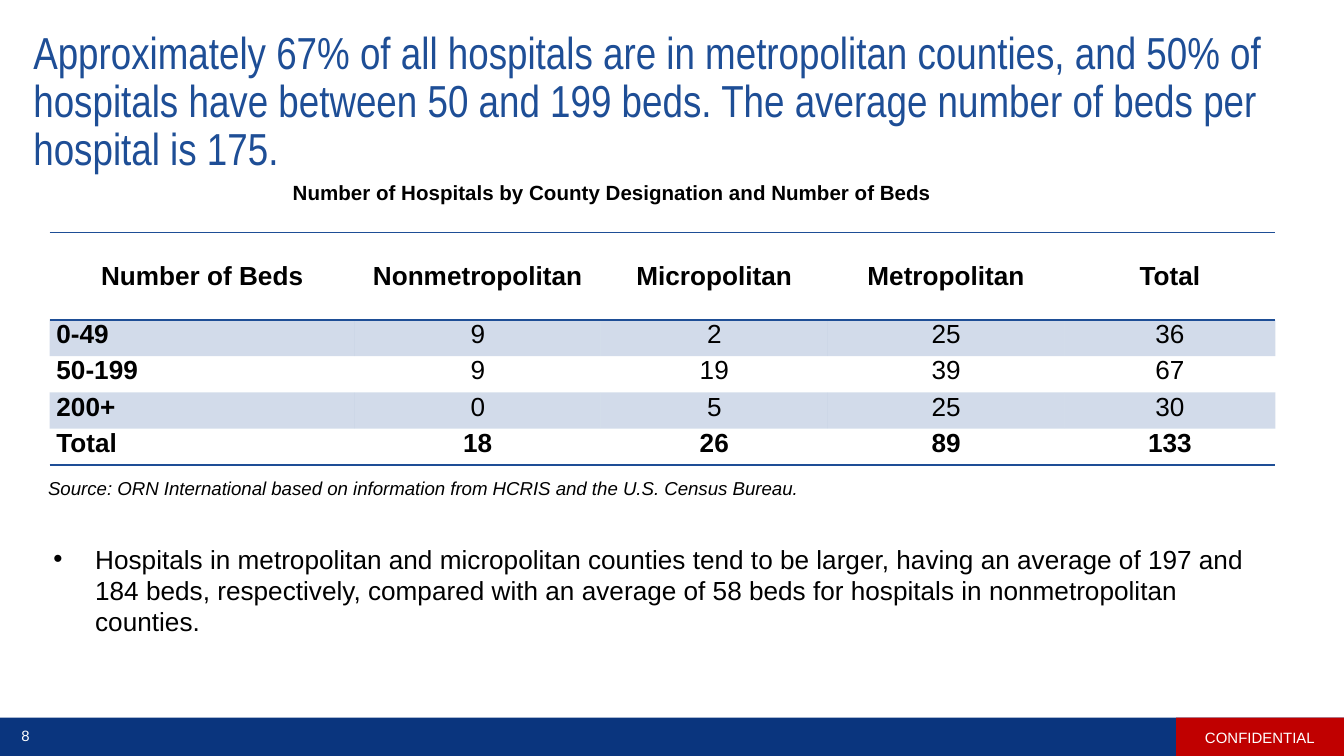
from pptx import Presentation
from pptx.dml.color import RGBColor
from pptx.enum.shapes import MSO_SHAPE as Shape
from pptx.enum.text import MSO_ANCHOR as Anchor, PP_ALIGN as Align
from pptx.oxml import parse_xml
from pptx.oxml.ns import nsdecls, qn
from pptx.util import Inches, Pt
from lxml import etree

BLUE = RGBColor(0x1E, 0x4E, 0x96)
NAVY = RGBColor(0x0A, 0x35, 0x7E)
RED = RGBColor(0xC0, 0x00, 0x00)
BLACK = RGBColor(0x00, 0x00, 0x00)
WHITE = RGBColor(0xFF, 0xFF, 0xFF)

TITLE = ("Approximately 67% of all hospitals are in metropolitan counties, and 50% of "
         "hospitals have between 50 and 199 beds. The average number of beds per hospital is 175.")
CAPTION = "Number of Hospitals by County Designation and Number of Beds"
SOURCE = "Source: ORN International based on information from HCRIS and the U.S. Census Bureau."
FINDING = ("Hospitals in metropolitan and micropolitan counties tend to be larger, having an average "
           "of 197 and 184 beds, respectively, compared with an average of 58 beds for hospitals in "
           "nonmetropolitan counties.")
BED_COUNTS = [
    ["Number of Beds", "Nonmetropolitan", "Micropolitan", "Metropolitan", "Total"],
    ["0-49", "9", "2", "25", "36"],
    ["50-199", "9", "19", "39", "67"],
    ["200+", "0", "5", "25", "30"],
    ["Total", "18", "26", "89", "133"],
]
COLUMN_WIDTHS = [2.27, 1.83, 1.69, 1.76, 1.57]
ROW_HEIGHTS = [0.65] + [0.27] * 4
PLAIN_TABLE_STYLE = "{2D5ABB26-0587-4C30-8999-92F81FD0307C}"


def style_font(font, size, color=BLACK, name="Arial", bold=False, italic=False):
    """Set every property of a font."""
    font.name, font.size, font.bold, font.italic = name, Pt(size), bold, italic
    font.color.rgb = color


def add_text(page, box, text, size, anchor=Anchor.TOP, align=Align.LEFT, **style):
    """Add a wrapped text box and return its text frame."""
    frame = page.shapes.add_textbox(*map(Inches, box)).text_frame
    frame.word_wrap = True
    frame.vertical_anchor = anchor
    frame.text = text
    para = frame.paragraphs[0]
    para.alignment = align
    style_font(para.runs[0].font, size, **style)
    return frame


def add_title(page, box):
    """Add the headline."""
    frame = add_text(page, box, TITLE, 24, Anchor.MIDDLE, color=BLUE, name="Arial Narrow")
    frame.margin_left = frame.margin_top = frame.margin_bottom = Inches(0.1)
    frame.margin_right = Inches(0.2)
    frame.paragraphs[0].line_spacing = 0.9


def add_bar(page, box, color):
    """Add a borderless coloured bar."""
    bar = page.shapes.add_shape(Shape.RECTANGLE, *map(Inches, box))
    bar.shadow.inherit = False
    bar.fill.solid()
    bar.fill.fore_color.rgb = color
    bar.line.fill.background()
    return bar


def add_footer(page, box):
    """Add the footer band with page number and confidentiality label."""
    left, top, width, height = box
    label_width = 1.25
    add_bar(page, box, NAVY)
    add_text(page, (left, top + 0.01, 0.38, 0.24), "8", 8, Anchor.MIDDLE, Align.CENTER, color=WHITE)
    label = add_bar(page, (left + width - label_width, top, label_width, height), RED)
    label.text_frame.text = "CONFIDENTIAL"
    label.text_frame.vertical_anchor = Anchor.MIDDLE
    para = label.text_frame.paragraphs[0]
    para.alignment = Align.CENTER
    style_font(para.runs[0].font, 8, WHITE)


def add_rule(cell, side):
    """Draw a one-point blue rule on one side of a cell."""
    rule = parse_xml(f'<a:{side} {nsdecls("a")} w="{Pt(1)}"><a:solidFill>'
                     f'<a:srgbClr val="{BLUE}"/></a:solidFill></a:{side}>')
    cell._tc.get_or_add_tcPr().insert(0, rule)


def shade(cell):
    """Fill a cell with blue at 20 percent opacity."""
    cell.fill.solid()
    cell.fill.fore_color.rgb = BLUE
    color = cell._tc.tcPr.find(qn("a:solidFill")).find(qn("a:srgbClr"))
    etree.SubElement(color, qn("a:alpha"), val="20000")


def fill_cell(cell, text, row, column):
    """Write and format one table cell."""
    last = len(BED_COUNTS) - 1
    cell.margin_left = cell.margin_right = Inches(0.05)
    cell.margin_top = cell.margin_bottom = 0
    cell.vertical_anchor = Anchor.MIDDLE if row == 0 else Anchor.TOP
    cell.text = text
    para = cell.text_frame.paragraphs[0]
    para.alignment = Align.LEFT if column == 0 and row else Align.CENTER
    style_font(para.runs[0].font, 14, bold=row in (0, last) or column == 0)
    if row % 2:
        shade(cell)
    else:
        cell.fill.background()
    if row in (0, last):
        add_rule(cell, "lnB")
    if row == 0:
        add_rule(cell, "lnT")


def add_bed_table(page, box):
    """Add the table of hospitals by county type and bed count."""
    frame = page.shapes.add_table(len(BED_COUNTS), len(COLUMN_WIDTHS), *map(Inches, box))
    table = frame.table
    table.first_row = table.horz_banding = False
    table._tbl.tblPr.find(qn("a:tableStyleId")).text = PLAIN_TABLE_STYLE
    for column, width in zip(table.columns, COLUMN_WIDTHS):
        column.width = Inches(width)
    for row, height in zip(table.rows, ROW_HEIGHTS):
        row.height = Inches(height)
    for row, values in enumerate(BED_COUNTS):
        for column, text in enumerate(values):
            fill_cell(table.cell(row, column), text, row, column)


def add_finding(page, box):
    """Add the bulleted finding with a hanging indent."""
    para = add_text(page, box, FINDING, 14).paragraphs[0]
    properties = para._p.get_or_add_pPr()
    properties.set("marL", str(Inches(0.31)))
    properties.set("indent", str(-Inches(0.31)))
    etree.SubElement(properties, qn("a:buFont"), typeface="Arial")
    etree.SubElement(properties, qn("a:buChar"), char="•")


def main():
    """Build and save the slide."""
    deck = Presentation()
    deck.slide_width = Inches(10)
    deck.slide_height = deck.slide_width * 9 // 16
    page = deck.slides.add_slide(deck.slide_layouts[6])
    add_footer(page, (0, 5.34, 10, 0.29))
    add_title(page, (0.15, 0.27, 9.67, 0.99))
    add_bed_table(page, (0.37, 1.73, 9.12, 1.73))
    add_text(page, (2.08, 1.29, 6.46, 0.29), CAPTION, 11, bold=True)
    add_text(page, (0.26, 3.5, 9.56, 0.27), SOURCE, 10, italic=True)
    add_finding(page, (0.3, 3.99, 9.27, 1.09))
    deck.save("out.pptx")


if __name__ == "__main__":
    main()
